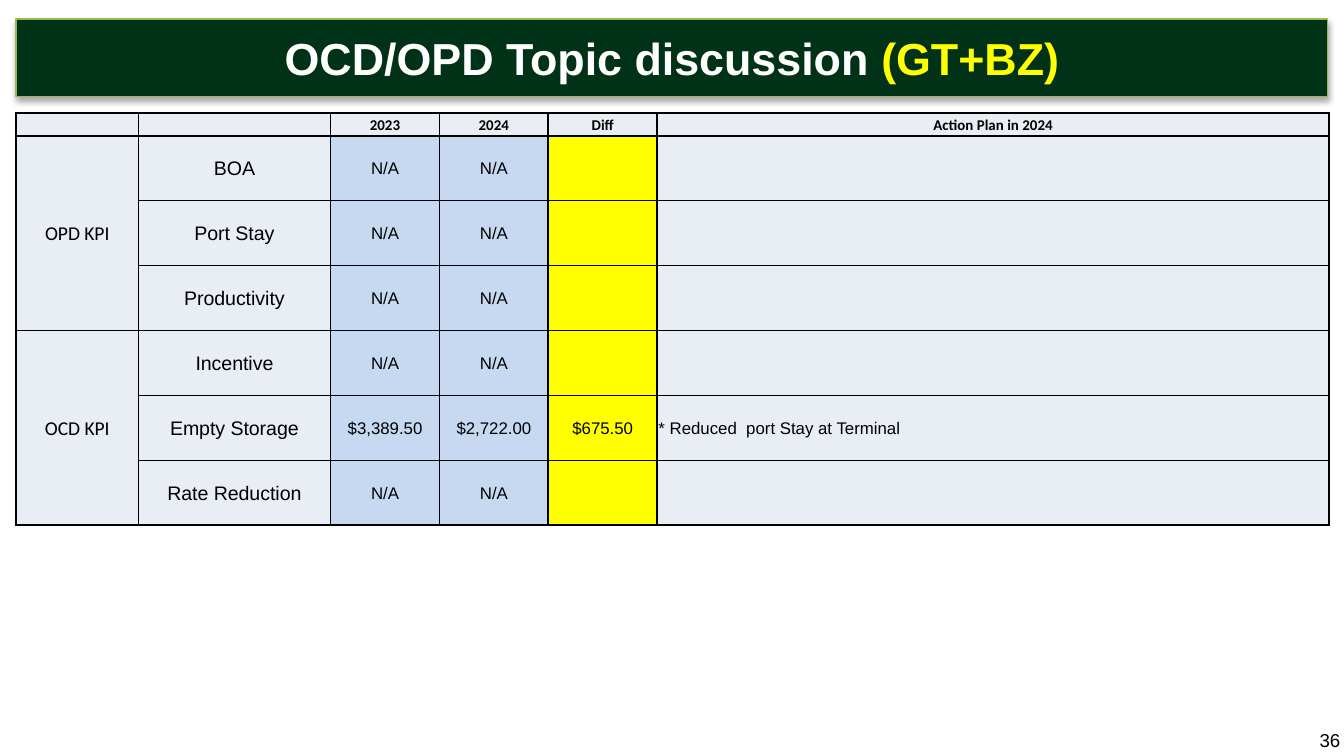
from pptx import Presentation
from pptx import util as u
from pptx.dml.color import RGBColor
from pptx.enum import shapes, text
from pptx.oxml import parse_xml

NS = 'xmlns:a="http://schemas.openxmlformats.org/drawingml/2006/main"'
WIDTH, MARGIN = 10, 0.12
HEIGHT = WIDTH * 9 / 16
GREEN, OLIVE, YELLOW, GREY, BLUE = "003217", "98B955", "FFFF00", "E9EDF4", "C6D9F1"
TITLE = [("OCD/OPD Topic discussion ", "FFFFFF"), ("(GT+BZ)", YELLOW)]
HEADER = ["", "", "2023", "2024", "Diff", "Action Plan in 2024"]
GROUPS = {
    "OPD KPI": [("BOA", "N/A", "N/A", "", ""),
                ("Port Stay", "N/A", "N/A", "", ""),
                ("Productivity", "N/A", "N/A", "", "")],
    "OCD KPI": [("Incentive", "N/A", "N/A", "", ""),
                ("Empty Storage", "$3,389.50", "$2,722.00", "$675.50",
                 "* Reduced  port Stay at Terminal"),
                ("Rate Reduction", "N/A", "N/A", "", "")],
}
COL_WIDTHS = [0.91, 1.43, 0.81, 0.81, 0.81, 5]
COL_FILLS = [GREY, GREY, BLUE, BLUE, YELLOW, GREY]
COL_SIZES = [10.5, 10.5, 9, 9, 9, 9]
TABLE_H, HEADER_H = 3.07, 0.17


def rgb(value):
    """Turn a hex string into a colour."""
    return RGBColor.from_string(value)


def style(p, size, name="Arial", bold=False, color="000000", align=text.PP_ALIGN.CENTER):
    """Set the font and alignment of a paragraph."""
    p.alignment = align
    p.font.size, p.font.name, p.font.bold = u.Pt(size), name, bold
    p.font.color.rgb = rgb(color)


def add_title(s):
    """Draw the title bar with its shadow."""
    sp = s.shapes.add_shape(shapes.MSO_SHAPE.RECTANGLE, u.Inches(MARGIN), u.Inches(0.14),
                            u.Inches(WIDTH - 2 * MARGIN), u.Inches(0.58))
    sp.fill.solid()
    sp.fill.fore_color.rgb = rgb(GREEN)
    sp.line.color.rgb = rgb(OLIVE)
    sp.line.width = u.Pt(0.75)
    sp.shadow.inherit = False
    effects = sp._element.spPr.find("{*}effectLst")
    effects.append(parse_xml(
        f'<a:outerShdw {NS} blurRad="{u.Pt(3.1)}" dist="{u.Pt(1.8)}" dir="5400000" '
        'rotWithShape="0"><a:srgbClr val="000000"><a:alpha val="35000"/></a:srgbClr>'
        '</a:outerShdw>'))
    tf = sp.text_frame
    tf.margin_left = tf.margin_right = tf.margin_top = tf.margin_bottom = 0
    tf.vertical_anchor = text.MSO_ANCHOR.MIDDLE
    p = tf.paragraphs[0]
    style(p, 24, bold=True)
    for words, color in TITLE:
        r = p.add_run()
        r.text = words
        r.font.color.rgb = rgb(color)


def fill_cell(cell, words, fill, size, **font):
    """Write, fill and border one cell."""
    cell.margin_left = cell.margin_right = cell.margin_top = u.Inches(0.01)
    cell.margin_bottom = 0
    cell.vertical_anchor = text.MSO_ANCHOR.MIDDLE
    cell.fill.solid()
    cell.fill.fore_color.rgb = rgb(fill)
    p = cell.text_frame.paragraphs[0]
    style(p, size, **font)
    if words:
        p.add_run().text = words
    else:
        p._p.get_or_add_endParaRPr().set("sz", str(int(size * 100)))
    for i, side in enumerate(("lnL", "lnR", "lnT", "lnB")):
        cell._tc.tcPr.insert(i, parse_xml(
            f'<a:{side} {NS} w="{u.Pt(1)}"><a:solidFill><a:srgbClr val="000000"/>'
            f'</a:solidFill></a:{side}>'))


def add_kpi_table(s):
    """Build the KPI table, one merged label per group."""
    rows = [(group if i == 0 else "", *kpi)
            for group, kpis in GROUPS.items() for i, kpi in enumerate(kpis)]
    row_h = (TABLE_H - HEADER_H) / len(rows)
    table = s.shapes.add_table(
        len(rows) + 1, len(HEADER), u.Inches(MARGIN), u.Inches(0.84),
        u.Inches(WIDTH - 2 * MARGIN), u.Inches(TABLE_H)).table
    for col, width in zip(table.columns, COL_WIDTHS):
        col.width = u.Inches(width)
    for i, row in enumerate(table.rows):
        row.height = u.Inches(row_h if i else HEADER_H)
    for c, words in enumerate(HEADER):
        fill_cell(table.cell(0, c), words, GREY, 8, name="Calibri", bold=True)
    for i, row in enumerate(rows, 1):
        for c, words in enumerate(row):
            fill_cell(table.cell(i, c), words, COL_FILLS[c], COL_SIZES[c],
                      name="Arial" if c else "Calibri",
                      align=text.PP_ALIGN.LEFT if c == 5 else text.PP_ALIGN.CENTER)
    top = 1
    for kpis in GROUPS.values():
        table.cell(top, 0).merge(table.cell(top + len(kpis) - 1, 0))
        top += len(kpis)


def add_page_number(s):
    """Write the page number in the lower right corner."""
    tf = s.shapes.add_textbox(u.Inches(9.72), u.Inches(5.39),
                              u.Inches(0.64), u.Inches(0.23)).text_frame
    tf.word_wrap = True
    tf.vertical_anchor = text.MSO_ANCHOR.MIDDLE
    p = tf.paragraphs[0]
    p.add_run().text = "36"
    style(p, 10, align=text.PP_ALIGN.LEFT)


def main():
    """Build the slide and save it."""
    prs = Presentation()
    prs.slide_width, prs.slide_height = u.Inches(WIDTH), u.Inches(HEIGHT)
    s = prs.slides.add_slide(prs.slide_layouts[6])
    add_title(s)
    add_kpi_table(s)
    add_page_number(s)
    prs.save("out.pptx")


if __name__ == "__main__":
    main()
